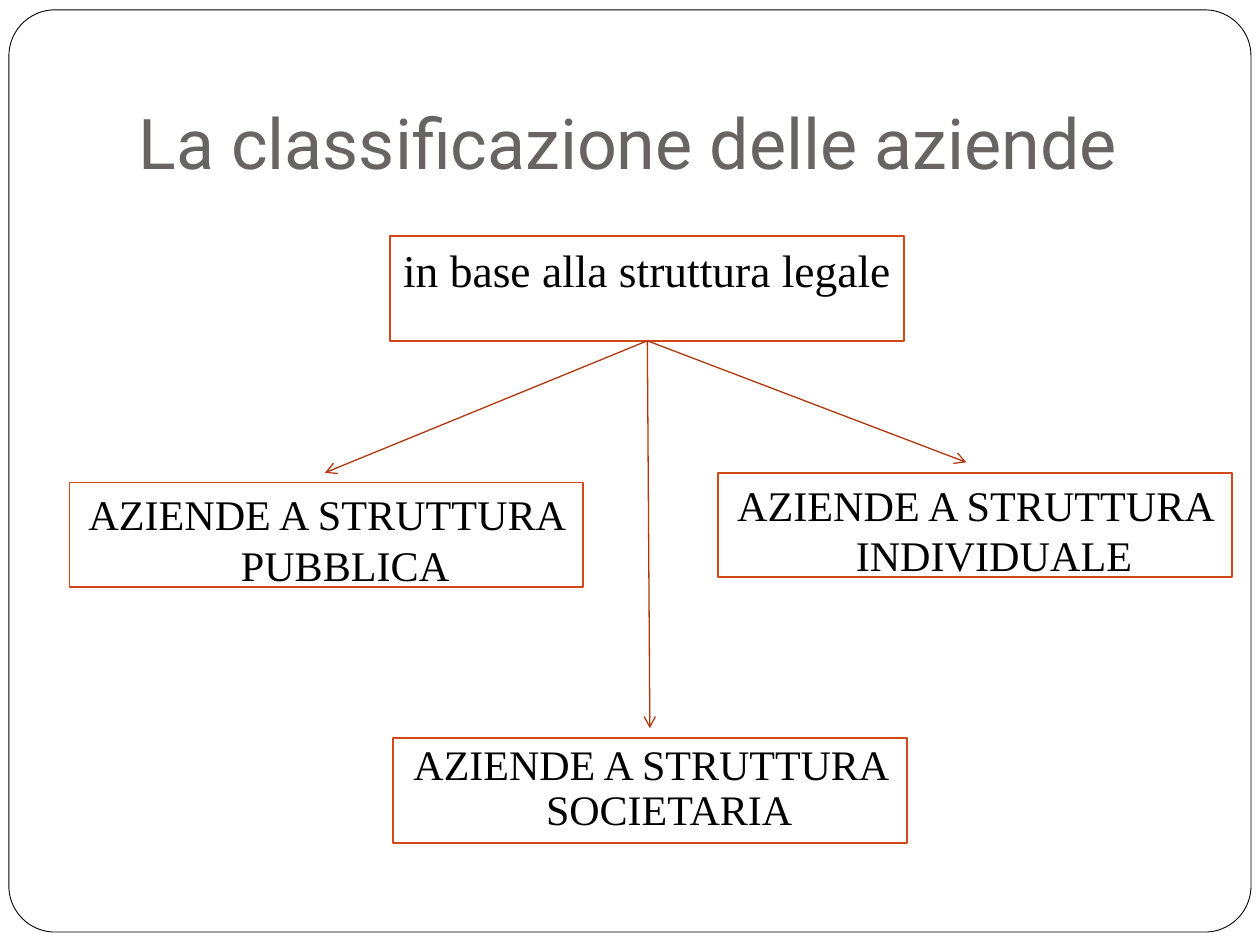
import pptx
import pptx.util
import pptx.dml.color
import pptx.enum.shapes
import pptx.enum.text
from lxml import etree
from pptx.util import Cm, Pt

SHAPE = pptx.enum.shapes.MSO_SHAPE
ALIGN = pptx.enum.text.PP_ALIGN
ANCHOR = pptx.enum.text.MSO_ANCHOR
BOX_W, BOX_H = 10.36, 2.11


def rgb(value):
    return pptx.dml.color.RGBColor.from_string(value)


class Deck:
    """Style and current slide, with lengths in centimetres."""
    title_font, body_font = "Roboto", "Times New Roman"
    title_color, text_color = "696464", "000000"
    paper, border, arrow_color = "FFFFFF", "D34817", "B1360B"

    def __init__(self, prs):
        self.s = prs.slides.add_slide(prs.slide_layouts[6])

    def shape(self, kind, x, y, w, h, line, width):
        sp = self.s.shapes.add_shape(kind, Cm(x), Cm(y), Cm(w), Cm(h))
        sp.shadow.inherit = False
        sp.fill.solid()
        sp.fill.fore_color.rgb = rgb(self.paper)
        sp.line.color.rgb = rgb(line)
        sp.line.width = Pt(width)
        return sp

    def text(self, tf, text, font, size, color):
        tf.word_wrap = True
        tf.text = text
        p = tf.paragraphs[0]
        r = p.runs[0]
        r.font.name = font
        r.font.size = Pt(size)
        r.font.color.rgb = rgb(color)
        return p

    def frame(self):
        sp = self.shape(SHAPE.ROUNDED_RECTANGLE, 0.18, 0.2, 25.04, 18.59, "000000", 0.5)
        sp.adjustments[0] = 0.05

    def title(self, text):
        tf = self.s.shapes.add_textbox(Cm(2.54), Cm(0.76), Cm(21.59), Cm(3.18)).text_frame
        tf.vertical_anchor = ANCHOR.BOTTOM
        tf.margin_bottom = Cm(0.25)
        self.text(tf, text, self.title_font, 40, self.title_color)

    def box(self, text, x, y, size=24, spacing=None):
        sp = self.shape(SHAPE.RECTANGLE, x, y, BOX_W, BOX_H, self.border, 1)
        tf = sp.text_frame
        tf.vertical_anchor = ANCHOR.TOP
        p = self.text(tf, text, self.body_font, size, self.text_color)
        p.alignment = ALIGN.CENTER
        p.space_before = Pt(5.8)
        if spacing:
            p.line_spacing = spacing
        pPr = p._p.get_or_add_pPr()
        pPr.set("marL", str(Cm(0.76)))
        pPr.set("indent", str(-Cm(0.76)))
        return sp

    def arrow(self, source, x, y):
        """Arrow from the bottom middle of source to a point."""
        c = self.s.shapes.add_connector(
            pptx.enum.shapes.MSO_CONNECTOR.STRAIGHT, 0, 0, Cm(x), Cm(y))
        c.begin_connect(source, 2)
        c.line.color.rgb = rgb(self.arrow_color)
        c.line.width = Pt(0.75)
        tail = etree.SubElement(c.line._get_or_add_ln(), pptx.oxml.ns.qn("a:tailEnd"))
        tail.set("type", "arrow")
        etree.SubElement(c._element.spPr, pptx.oxml.ns.qn("a:effectLst"))


def main():
    prs = pptx.Presentation()
    prs.slide_width, prs.slide_height = Cm(25.4), Cm(19.05)
    deck = Deck(prs)
    deck.frame()
    deck.title("La classificazione delle aziende")
    deck.box("AZIENDE A STRUTTURA PUBBLICA", 1.4, 9.73, 24.1)
    deck.box("AZIENDE A STRUTTURA INDIVIDUALE", 14.48, 9.53, 24.1)
    root = deck.box("in base alla struttura legale", 7.87, 4.76, 26)
    for x, y in [(6.55, 9.53), (19.48, 9.32), (13.1, 14.68)]:
        deck.arrow(root, x, y)
    deck.box("AZIENDE A STRUTTURA SOCIETARIA", 7.93, 14.88, spacing=0.9)
    prs.save("out.pptx")


if __name__ == "__main__":
    main()
